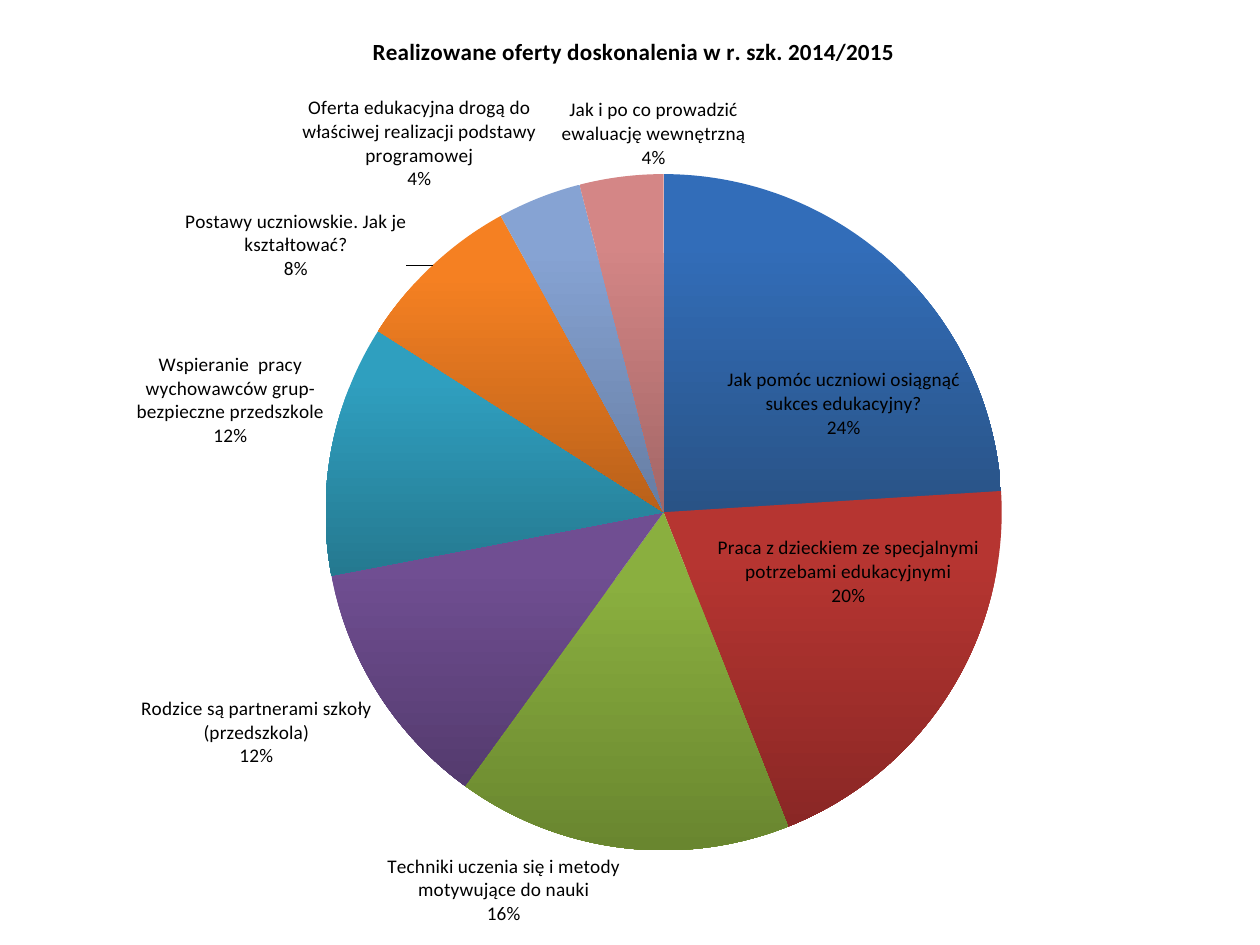
from lxml import etree
from pptx import Presentation
from pptx.chart.data import CategoryChartData
from pptx.dml.color import RGBColor as RGB
from pptx.enum.chart import XL_CHART_TYPE as ChartType, XL_LABEL_POSITION as LabelPos
from pptx.oxml.ns import qn
from pptx.util import Pt

TITLE = "Realizowane oferty doskonalenia w r. szk. 2014/2015"
# Offer, share in percent, slice gradient (top, bottom)
OFFERS = [
    ("Jak pomóc uczniowi osiągnąć sukces edukacyjny?", 24, ("326DB9", "295386")),
    ("Praca z dzieckiem ze specjalnymi potrzebami edukacyjnymi", 20, ("B63531", "8A2725")),
    ("Techniki uczenia się i metody motywujące do nauki", 16, ("8AAF3F", "69862F")),
    ("Rodzice są partnerami szkoły (przedszkola)", 12, ("704E92", "543B6E")),
    ("Wspieranie  pracy wychowawców grup- bezpieczne przedszkole", 12, ("2F9FBF", "257990")),
    ("Postawy uczniowskie. Jak je kształtować?", 8, ("F58022", "B9611A")),
    ("Oferta edukacyjna drogą do właściwej realizacji podstawy programowej", 4,
     ("86A3D3", "667DA3")),
    ("Jak i po co prowadzić ewaluację wewnętrzną", 4, ("D48686", "A36666")),
]
THEME = {"font": "Calibri", "text": "000000", "label": 11, "title": 13.2}
SLIDE_W, SLIDE_H = 720, 540
PIE_LEFT, PIE_TOP, PIE_SIZE = 186, 99.5, 386.5
TITLE_LEFT, TITLE_TOP = 210.5, 18


def style_font(font, size, bold):
    font.name, font.size, font.bold = THEME["font"], Pt(size), bold
    font.color.rgb = RGB.from_string(THEME["text"])


def set_layout(parent, index, **settings):
    """Place a chart part by hand; fractions are of the chart area."""
    for old in parent.findall(qn("c:layout")):
        parent.remove(old)
    layout = etree.Element(qn("c:layout"))
    manual = etree.SubElement(layout, qn("c:manualLayout"))
    for tag, value in settings.items():
        etree.SubElement(manual, qn(f"c:{tag}")).set("val", str(value))
    parent.insert(index, layout)


prs = Presentation()
prs.slide_width, prs.slide_height = Pt(SLIDE_W), Pt(SLIDE_H)
slide = prs.slides.add_slide(prs.slide_layouts[6])

# Pie over the whole slide
offers = CategoryChartData(number_format="General")
offers.categories = [name for name, _, _ in OFFERS]
offers.add_series("Series 1", [share for _, share, _ in OFFERS])
chart = slide.shapes.add_chart(
    ChartType.PIE, 0, 0, Pt(SLIDE_W), Pt(SLIDE_H), offers).chart
style_font(chart.font, THEME["label"], False)
chart.has_legend = False
pie = chart.plots[0]
pie.vary_by_categories = True
set_layout(chart._chartSpace.chart.plotArea, 0,
           layoutTarget="inner", xMode="edge", yMode="edge",
           x=round(PIE_LEFT / SLIDE_W, 4), y=round(PIE_TOP / SLIDE_H, 4),
           w=round(PIE_SIZE / SLIDE_W, 4), h=round(PIE_SIZE / SLIDE_H, 4))

# Title
chart.has_title = True
heading = chart.chart_title
heading.text_frame.text = TITLE
style_font(heading.text_frame.paragraphs[0].runs[0].font, THEME["title"], True)
heading.include_in_layout = False
set_layout(heading._element, 1, xMode="edge", yMode="edge",
           x=round(TITLE_LEFT / SLIDE_W, 4), y=round(TITLE_TOP / SLIDE_H, 4))

# Slices shaded from top to bottom
shares = pie.series[0]
for i, (_, _, shades) in enumerate(OFFERS):
    fill = shares.points[i].format.fill
    fill.gradient()
    fill.gradient_angle = 270
    for stop, shade, position in zip(fill.gradient_stops, shades, (0.2, 1)):
        stop.color.rgb = RGB.from_string(shade)
        stop.position = position
    shares.points[i].format.line.fill.background()

# Labels: offer name above its percentage
labels = shares.data_labels
labels.show_category_name = labels.show_percentage = True
labels.show_value = False
labels.number_format, labels.number_format_is_linked = "0%", False
labels.position = LabelPos.BEST_FIT
style_font(labels.font, THEME["label"], False)
separator = etree.Element(qn("c:separator"))
separator.text = "\n"
labels._element.find(qn("c:showBubbleSize")).addnext(separator)

prs.save("out.pptx")
